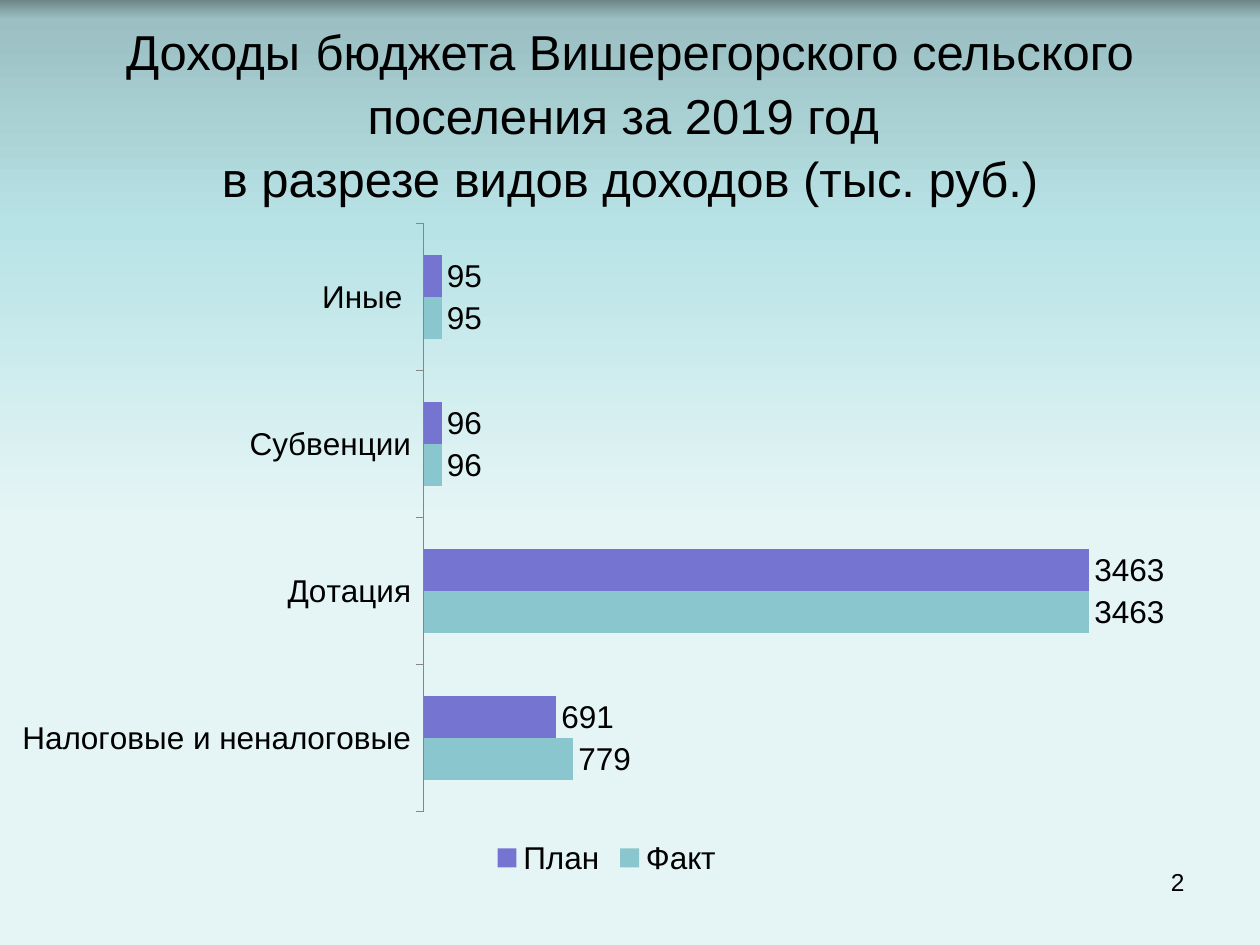
from lxml import etree
from pptx import Presentation
from pptx.chart.data import CategoryChartData
from pptx.dml.color import RGBColor
from pptx.enum.chart import XL_CHART_TYPE as ChartType, XL_LABEL_POSITION as LabelPos
from pptx.enum.chart import XL_LEGEND_POSITION as LegendPos, XL_TICK_MARK as TickMark
from pptx.enum.text import MSO_ANCHOR as Anchor, PP_ALIGN as Align
from pptx.oxml import parse_xml
from pptx.oxml.ns import nsdecls, qn
from pptx.util import Inches, Pt

FONT = "Arial"
COLORS = {"text": "000000", "axis": "868686", "Факт": "8AC6CD", "План": "7575D1"}
SKY = [(0, "6D8688"), (2, "9BBFC2"), (24, "B8E3E6"), (55, "E5F5F6"), (100, "E5F5F6")]


def set_font(font, size):
    font.name = FONT
    font.size = Pt(size)
    font.color.rgb = RGBColor.from_string(COLORS["text"])


def add_text_frame(slide, box, anchor, align):
    """Add a wrapping text box; return its frame and aligned first paragraph."""
    frame = slide.shapes.add_textbox(*map(Inches, box)).text_frame
    frame.word_wrap = True
    frame.vertical_anchor = anchor
    frame.paragraphs[0].alignment = align
    return frame.paragraphs[0]


prs = Presentation()
prs.slide_width, prs.slide_height = Inches(10), Inches(7.5)
slide = prs.slides.add_slide(prs.slide_layouts[6])

# Background: vertical gradient
background = slide.background.fill
background.gradient()
background.gradient_angle = 270
stops = next(slide.element.iter(qn("a:gsLst")))
for stop in list(stops):
    stops.remove(stop)
for percent, color in SKY:
    stop = etree.SubElement(stops, qn("a:gs"), pos=str(percent * 1000))
    etree.SubElement(stop, qn("a:srgbClr"), val=color)

# Title
title = add_text_frame(slide, (0.5, 0.17, 9, 1.38), Anchor.MIDDLE, Align.CENTER)
title.line_spacing = 1.07
for words, size in [("Доходы", 28), (" ", 32),
                    ("бюджета Вишерегорского сельского поселения за 2019 год ", 28)]:
    run = title.add_run()
    run.text = words
    set_font(run.font, size)
title.add_line_break()
run = title.add_run()
run.text = "в разрезе видов доходов (тыс. руб.)"
set_font(run.font, 28)

# Income chart
income = CategoryChartData()
income.categories = ["Налоговые и неналоговые", "Дотация", "Субвенции", "Иные "]
income.add_series("Факт", [779, 3463, 96, 95])
income.add_series("План", [691, 3463, 96, 95])
chart = slide.shapes.add_chart(
    ChartType.BAR_CLUSTERED, *map(Inches, (-0.03, 1.67, 9.69, 5.33)), income).chart
set_font(chart.font, 18)
chart.has_title = False
chart.has_legend = True
chart.legend.position = LegendPos.BOTTOM
chart.legend.include_in_layout = False

kinds = chart.category_axis
kinds.major_tick_mark = TickMark.OUTSIDE
kinds.minor_tick_mark = TickMark.NONE
kinds.format.line.width = Pt(0.75)
kinds.format.line.color.rgb = RGBColor.from_string(COLORS["axis"])
amounts = chart.value_axis
amounts.visible = False
amounts.has_major_gridlines = False
amounts.minimum_scale, amounts.maximum_scale = 0, 4000

bars = chart.plots[0]
bars.gap_width = 150
bars.overlap = 0
bars.vary_by_categories = False
for series in bars.series:
    series.format.fill.solid()
    series.format.fill.fore_color.rgb = RGBColor.from_string(COLORS[series.name])
    labels = series.data_labels
    labels.show_value = True
    labels.position = LabelPos.OUTSIDE_END
    set_font(labels.font, 18)

# Plot area as shares of the chart's frame
plot_area = next(chart.element.iter(qn("c:plotArea")))
for layout in plot_area.findall(qn("c:layout")):
    plot_area.remove(layout)
shares = "".join(f'<c:{side} val="{share}"/>' for side, share in
                 [("x", 0.35), ("y", 0.02), ("w", 0.63), ("h", 0.875)])
plot_area.insert(0, parse_xml(
    f'<c:layout {nsdecls("c")}><c:manualLayout><c:layoutTarget val="inner"/>'
    f'<c:xMode val="edge"/><c:yMode val="edge"/>{shares}</c:manualLayout></c:layout>'))

# Page number
page = add_text_frame(slide, (7.17, 6.83, 2.33, 0.52), Anchor.TOP, Align.RIGHT)
run = page.add_run()
run.text = "2"
set_font(run.font, 14)

prs.save("out.pptx")
